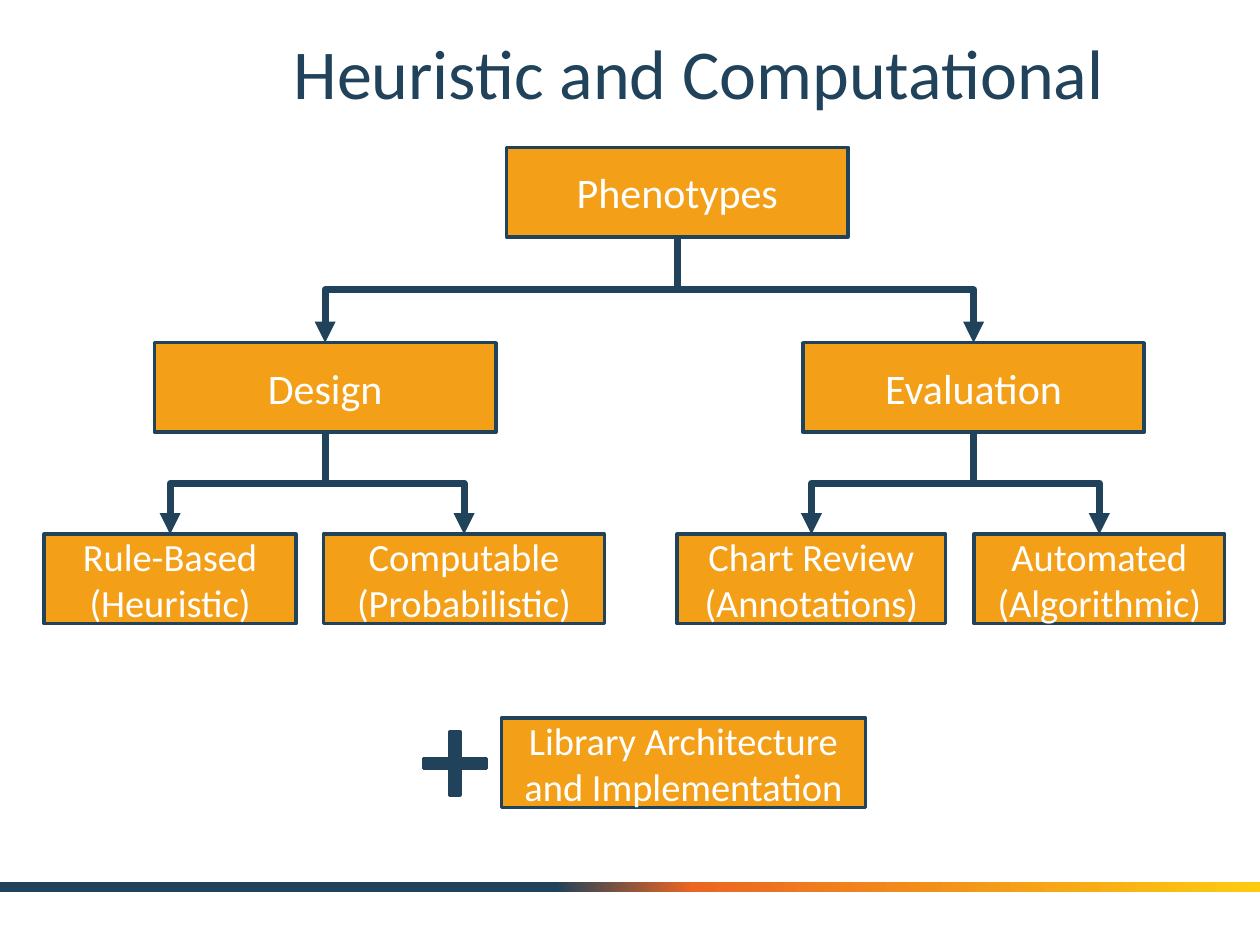
from copy import deepcopy
from dataclasses import dataclass

from lxml import etree
from pptx import Presentation
from pptx.dml.color import RGBColor
from pptx.enum import shapes, text
from pptx.oxml.ns import qn
from pptx.util import Pt

COLORS = {
    "navy": "20425A",
    "amber": "F49F18",
    "orange": "EB6622",
    "yellow": "FCCB10",
    "white": "FFFFFF",
}
FONT = "Calibri"
BOX_HEIGHT = 51.1
ROW_TOPS = (84.25, 195.85, 305.25, 410.4)
BOTTOM, TOP = 2, 0


@dataclass(frozen=True)
class Box:
    label: str
    left: float
    row: int
    width: float = 195.1
    size: float = 24

    @property
    def top(self) -> float:
        return ROW_TOPS[self.row]

    @property
    def center(self) -> float:
        return self.left + self.width / 2


PHENOTYPES = Box("Phenotypes", 289.5, 0)
DESIGN = Box("Design", 88.25, 1)
EVALUATION = Box("Evaluation", 458.75, 1)
RULE_BASED = Box("Rule-Based\v(Heuristic)", 25.2, 2, 144, 22)
COMPUTABLE = Box("Computable\v(Probabilistic)", 184.9, 2, 160.5, 22)
CHART_REVIEW = Box("Chart Review\v(Annotations)", 387, 2, 153.3, 22)
AUTOMATED = Box("Automated\v(Algorithmic)", 556.5, 2, 143.3, 22)
LIBRARY = Box("Library Architecture and Implementation", 286.5, 3, 208.1, 22)

TREE = {
    PHENOTYPES: (DESIGN, EVALUATION),
    DESIGN: (RULE_BASED, COMPUTABLE),
    EVALUATION: (CHART_REVIEW, AUTOMATED),
}
BOXES = (PHENOTYPES, DESIGN, EVALUATION, RULE_BASED, COMPUTABLE,
         CHART_REVIEW, AUTOMATED, LIBRARY)


def color(name: str) -> RGBColor:
    return RGBColor.from_string(COLORS[name])


def format_paragraph(paragraph, size: float, color_name: str) -> None:
    paragraph.alignment = text.PP_ALIGN.CENTER
    paragraph.font.name = FONT
    paragraph.font.size = Pt(size)
    paragraph.font.color.rgb = color(color_name)


def add_outlined(slide, kind, left: float, top: float, width: float,
                 height: float, fill: str):
    shape = slide.shapes.add_shape(kind, Pt(left), Pt(top), Pt(width), Pt(height))
    shape.shadow.inherit = False
    shape.fill.solid()
    shape.fill.fore_color.rgb = color(fill)
    shape.line.color.rgb = color("navy")
    shape.line.width = Pt(2)
    return shape


def add_box(slide, box: Box):
    shape = add_outlined(slide, shapes.MSO_SHAPE.RECTANGLE, box.left, box.top,
                         box.width, BOX_HEIGHT, "amber")
    frame = shape.text_frame
    frame.word_wrap = True
    frame.vertical_anchor = text.MSO_ANCHOR.MIDDLE
    frame.paragraphs[0].text = box.label
    format_paragraph(frame.paragraphs[0], box.size, "white")
    return shape


def add_branch(slide, parent: Box, child: Box, drawn: dict) -> None:
    """Join parent to child with an elbow that leaves and arrives vertically."""
    connector = slide.shapes.add_connector(shapes.MSO_CONNECTOR.ELBOW, 0, 0, 0, 0)
    connector.begin_connect(drawn[parent], BOTTOM)
    connector.end_connect(drawn[child], TOP)

    start = parent.top + BOX_HEIGHT
    drop = child.top - start
    reach = abs(child.center - parent.center)
    # The elbow runs sideways by default, so its frame is turned about its middle.
    connector.left = Pt((parent.center + child.center - drop) / 2)
    connector.top = Pt((start + child.top - reach) / 2)
    connector.width, connector.height = Pt(drop), Pt(reach)
    properties = connector._element.spPr
    frame = properties.find(qn("a:xfrm"))
    goes_right = child.center > parent.center
    frame.set("rot", "16200000" if goes_right else "5400000")
    frame.set("flipH", "1" if goes_right else "0")
    frame.set("flipV", "0")

    connector.line.color.rgb = color("navy")
    connector.line.width = Pt(4)
    line = properties.find(qn("a:ln"))
    etree.SubElement(line, qn("a:tailEnd"), type="triangle")
    etree.SubElement(properties, qn("a:effectLst"))


def add_footer_bar(slide) -> None:
    bar = slide.shapes.add_shape(shapes.MSO_SHAPE.RECTANGLE,
                                 Pt(0), Pt(504), Pt(720), Pt(5.75))
    bar.shadow.inherit = False
    bar.line.fill.background()
    bar.fill.gradient()
    bar.fill.gradient_angle = 0
    stop_list = bar._element.spPr.find(".//" + qn("a:gsLst"))
    stop_list.append(deepcopy(stop_list[0]))
    stops = ((0.44, "navy"), (0.55, "orange"), (1, "yellow"))
    for stop, (position, name) in zip(bar.fill.gradient_stops, stops):
        stop.position = position
        stop.color.rgb = color(name)


def format_title(slide) -> None:
    title = slide.shapes.title
    title.left, title.top, title.width, title.height = (
        Pt(102.25), Pt(8), Pt(594), Pt(66.25))
    title.text_frame.text = "Heuristic and Computational"
    title.text_frame.vertical_anchor = text.MSO_ANCHOR.MIDDLE
    format_paragraph(title.text_frame.paragraphs[0], 40, "navy")


def main() -> None:
    presentation = Presentation()
    presentation.slide_width, presentation.slide_height = Pt(720), Pt(540)
    slide = presentation.slides.add_slide(presentation.slide_layouts[5])
    format_title(slide)
    add_footer_bar(slide)
    drawn = {box: add_box(slide, box) for box in BOXES}
    for parent, children in TREE.items():
        for child in children:
            add_branch(slide, parent, child, drawn)
    plus = add_outlined(slide, shapes.MSO_SHAPE.CROSS, 242, 418.25, 36, 36, "navy")
    plus.adjustments[0] = 0.42
    presentation.save("out.pptx")


if __name__ == "__main__":
    main()
